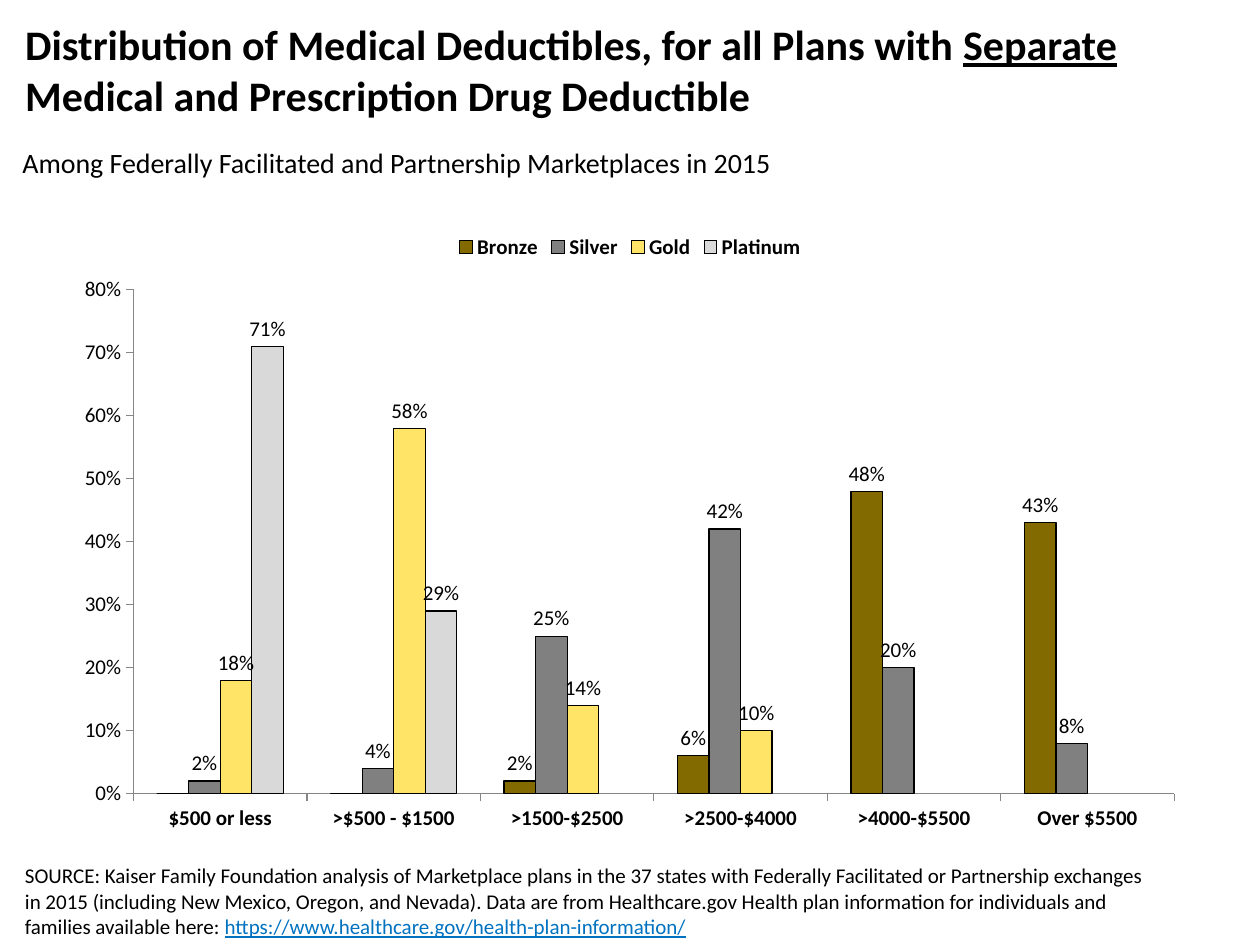
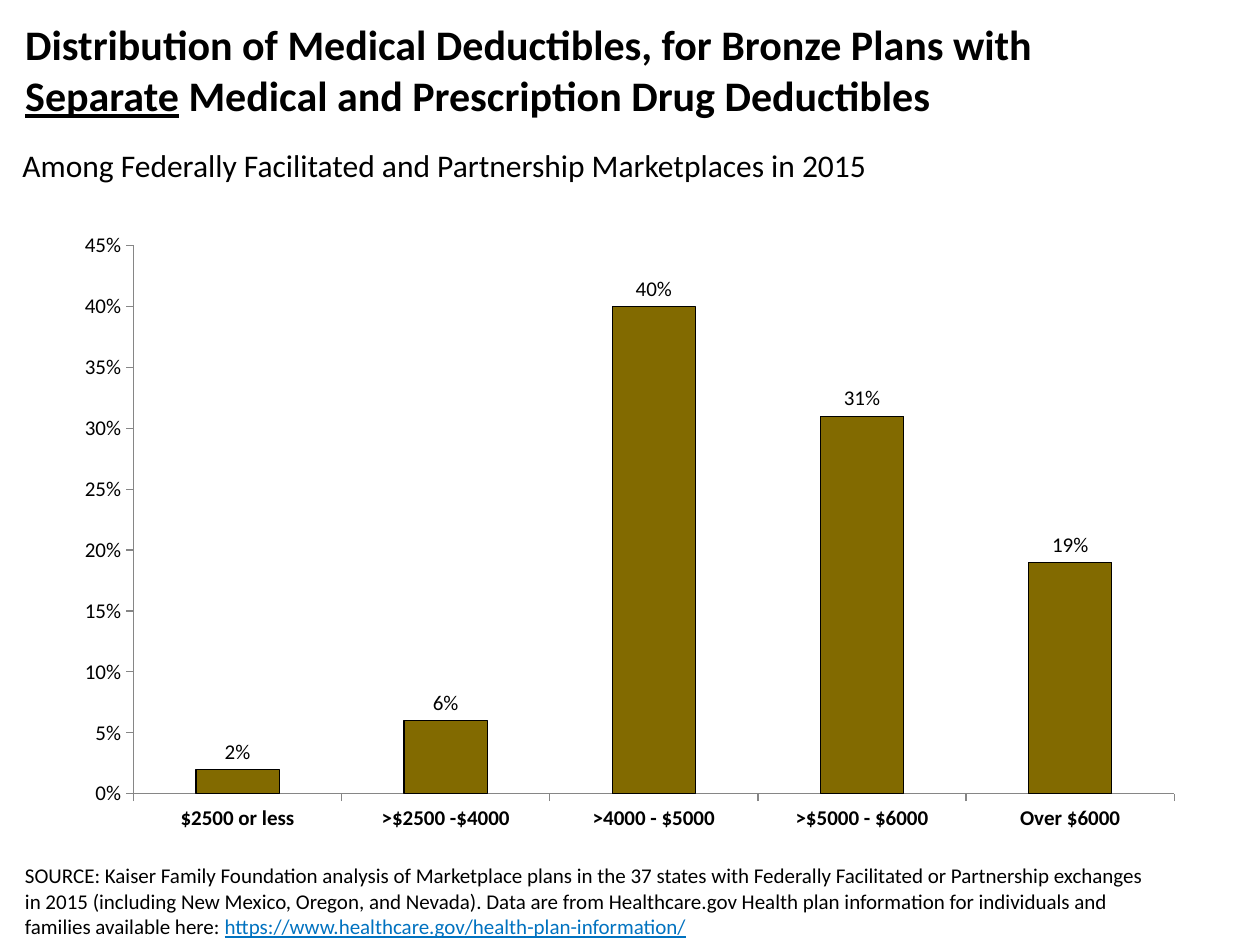
from lxml import etree
from pptx import Presentation
from pptx.chart.data import CategoryChartData
from pptx.dml.color import RGBColor
from pptx.enum.chart import XL_CHART_TYPE, XL_LABEL_POSITION, XL_LEGEND_POSITION, XL_TICK_MARK
from pptx.enum.text import MSO_ANCHOR, MSO_AUTO_SIZE, PP_ALIGN
from pptx.oxml.ns import qn
from pptx.util import Pt

CLUSTERED = XL_CHART_TYPE.COLUMN_CLUSTERED
OUTSIDE_END = XL_LABEL_POSITION.OUTSIDE_END
LEGEND_TOP = XL_LEGEND_POSITION.TOP
TICK_OUTSIDE, TICK_NONE = XL_TICK_MARK.OUTSIDE, XL_TICK_MARK.NONE
TOP, LEFT = MSO_ANCHOR.TOP, PP_ALIGN.LEFT
NO_FIT, GROW = MSO_AUTO_SIZE.NONE, MSO_AUTO_SIZE.SHAPE_TO_FIT_TEXT

FONT = "Calibri"
BLACK = RGBColor(0x00, 0x00, 0x00)
LINK_BLUE = RGBColor(0x00, 0x72, 0xC0)
AXIS_GRAY = RGBColor(0x86, 0x86, 0x86)
BRONZE = RGBColor(0x82, 0x6A, 0x00)
SILVER = RGBColor(0x80, 0x80, 0x80)
GOLD = RGBColor(0xFF, 0xE4, 0x68)
PLATINUM = RGBColor(0xD9, 0xD9, 0xD9)

EMU_PER_PX = 9144
SLIDE_SIZE = (1000, 750)
TITLE_BOX = (10, 10, 980, 100)
CHART_BOX = (50, 175, 900, 495)
SOURCE_BOX = (10, 680, 910, 60)
PLOT_LEFT, PLOT_RIGHT, PLOT_BOTTOM = 106, 932, 630

SUBTITLE = "Among Federally Facilitated and Partnership Marketplaces in 2015"
SOURCE = [
    ("SOURCE: Kaiser Family Foundation analysis of Marketplace plans in the 37 states with "
     "Federally Facilitated or Partnership exchanges in 2015 (including New Mexico, Oregon, "
     "and Nevada). Data are from Healthcare.gov Health plan information for individuals and "
     "families available here: ", {}),
    ("https://www.healthcare.gov/health-plan-information/",
     {"color": LINK_BLUE, "underline": True}),
]

SLIDES = [
    {
        "title": [
            ("Distribution of Medical Deductibles, for all Plans with ", {}),
            ("Separate ", {"underline": True}),
            ("Medical and Prescription Drug Deductible", {}),
        ],
        "subtitle_box": (8, 111, 626, 37),
        "subtitle_size": 16,
        "categories": ["$500 or less", ">$500 - $1500", ">1500-$2500", ">2500-$4000",
                       ">4000-$5500", "Over $5500"],
        "series": [
            ("Bronze", BRONZE, [0, 0, 0.02, 0.06, 0.48, 0.43]),
            ("Silver", SILVER, [0.02, 0.04, 0.25, 0.42, 0.2, 0.08]),
            ("Gold", GOLD, [0.18, 0.58, 0.14, 0.1, None, None]),
            ("Platinum", PLATINUM, [0.71, 0.29, None, None, None, None]),
        ],
        "axis_maximum": 0.8,
        "axis_step": 0.1,
        "plot_top": 230,
    },
    {
        "title": [
            ("Distribution of Medical Deductibles, for Bronze Plans with ", {}),
            ("\n", {}),
            ("Separate", {"underline": True}),
            (" Medical and Prescription Drug Deductibles", {}),
        ],
        "subtitle_box": (8, 111, 702, 40),
        "subtitle_size": 18,
        "categories": ["$2500 or less", ">$2500 -$4000", ">4000 - $5000", ">$5000 - $6000",
                       "Over $6000"],
        "series": [("Series 1", BRONZE, [0.02, 0.06, 0.4, 0.31, 0.19])],
        "axis_maximum": 0.45,
        "axis_step": 0.05,
        "plot_top": 195,
    },
]


def px(*lengths):
    return [length * EMU_PER_PX for length in lengths]


def format_font(font, size, color=BLACK, bold=False, underline=False):
    font.name = FONT
    font.size = Pt(size)
    font.color.rgb = color
    font.bold = bold
    font.underline = underline


def write_text(shape, box, pieces, size, bold=False, wrap=True, fit=NO_FIT):
    shape.left, shape.top, shape.width, shape.height = px(*box)
    frame = shape.text_frame
    frame.word_wrap = wrap
    frame.auto_size = fit
    frame.vertical_anchor = TOP
    paragraph = frame.paragraphs[0]
    paragraph.alignment = LEFT
    for text, style in pieces:
        if text == "\n":
            paragraph.add_line_break()
            continue
        run = paragraph.add_run()
        run.text = text
        format_font(run.font, size, bold=bold, **style)


def fix_plot_area(chart, plot_top):
    left, top, width, height = CHART_BOX
    fractions = {
        "x": (PLOT_LEFT - left) / width,
        "y": (plot_top - top) / height,
        "w": (PLOT_RIGHT - PLOT_LEFT) / width,
        "h": (PLOT_BOTTOM - plot_top) / height,
    }
    settings = {"layoutTarget": "inner", "xMode": "edge", "yMode": "edge", **fractions}
    plot_area = chart.element.find(".//" + qn("c:plotArea"))
    layout = plot_area.find(qn("c:layout"))
    if layout is None:
        layout = etree.Element(qn("c:layout"))
        plot_area.insert(0, layout)
    manual = etree.SubElement(layout, qn("c:manualLayout"))
    for name, value in settings.items():
        etree.SubElement(manual, qn("c:" + name)).set("val", str(value))


def add_column_chart(slide, content):
    chart_data = CategoryChartData(number_format="0%")
    chart_data.categories = content["categories"]
    for name, color, values in content["series"]:
        chart_data.add_series(name, values)
    chart = slide.shapes.add_chart(CLUSTERED, *px(*CHART_BOX), chart_data).chart
    chart.has_title = False
    format_font(chart.font, 18)

    chart.has_legend = len(content["series"]) > 1
    if chart.has_legend:
        chart.legend.position = LEGEND_TOP
        chart.legend.include_in_layout = False
        format_font(chart.legend.font, 12, bold=True)

    for axis, bold in ((chart.category_axis, True), (chart.value_axis, False)):
        axis.has_major_gridlines = False
        axis.major_tick_mark = TICK_OUTSIDE
        axis.minor_tick_mark = TICK_NONE
        axis.format.line.color.rgb = AXIS_GRAY
        axis.format.line.width = Pt(0.75)
        format_font(axis.tick_labels.font, 12, bold=bold)
    value_axis = chart.value_axis
    value_axis.minimum_scale = 0
    value_axis.maximum_scale = content["axis_maximum"]
    value_axis.major_unit = content["axis_step"]
    value_axis.tick_labels.number_format = "0%"
    value_axis.tick_labels.number_format_is_linked = False

    plot = chart.plots[0]
    plot.gap_width = 150
    plot.overlap = 0
    plot.vary_by_categories = False
    for series, (name, color, values) in zip(plot.series, content["series"]):
        series.format.fill.solid()
        series.format.fill.fore_color.rgb = color
        series.format.line.color.rgb = BLACK
        series.format.line.width = Pt(0.75)
        labels = series.data_labels
        labels.show_value = True
        labels.position = OUTSIDE_END
        labels.number_format = "0%;;" if 0 in values else "0%"
        labels.number_format_is_linked = False
        format_font(labels.font, 12)
    fix_plot_area(chart, content["plot_top"])


def main():
    presentation = Presentation()
    presentation.slide_width, presentation.slide_height = px(*SLIDE_SIZE)
    title_only = presentation.slide_layouts.get_by_name("Title Only")
    for content in SLIDES:
        slide = presentation.slides.add_slide(title_only)
        write_text(slide.shapes.title, TITLE_BOX, content["title"], 24, bold=True)
        add_column_chart(slide, content)
        subtitle_box = content["subtitle_box"]
        subtitle = slide.shapes.add_textbox(*px(*subtitle_box))
        write_text(subtitle, subtitle_box, [(SUBTITLE, {})], content["subtitle_size"],
                   wrap=False, fit=GROW)
        source = slide.shapes.add_textbox(*px(*SOURCE_BOX))
        write_text(source, SOURCE_BOX, SOURCE, 12)
    presentation.save("out.pptx")


if __name__ == "__main__":
    main()
